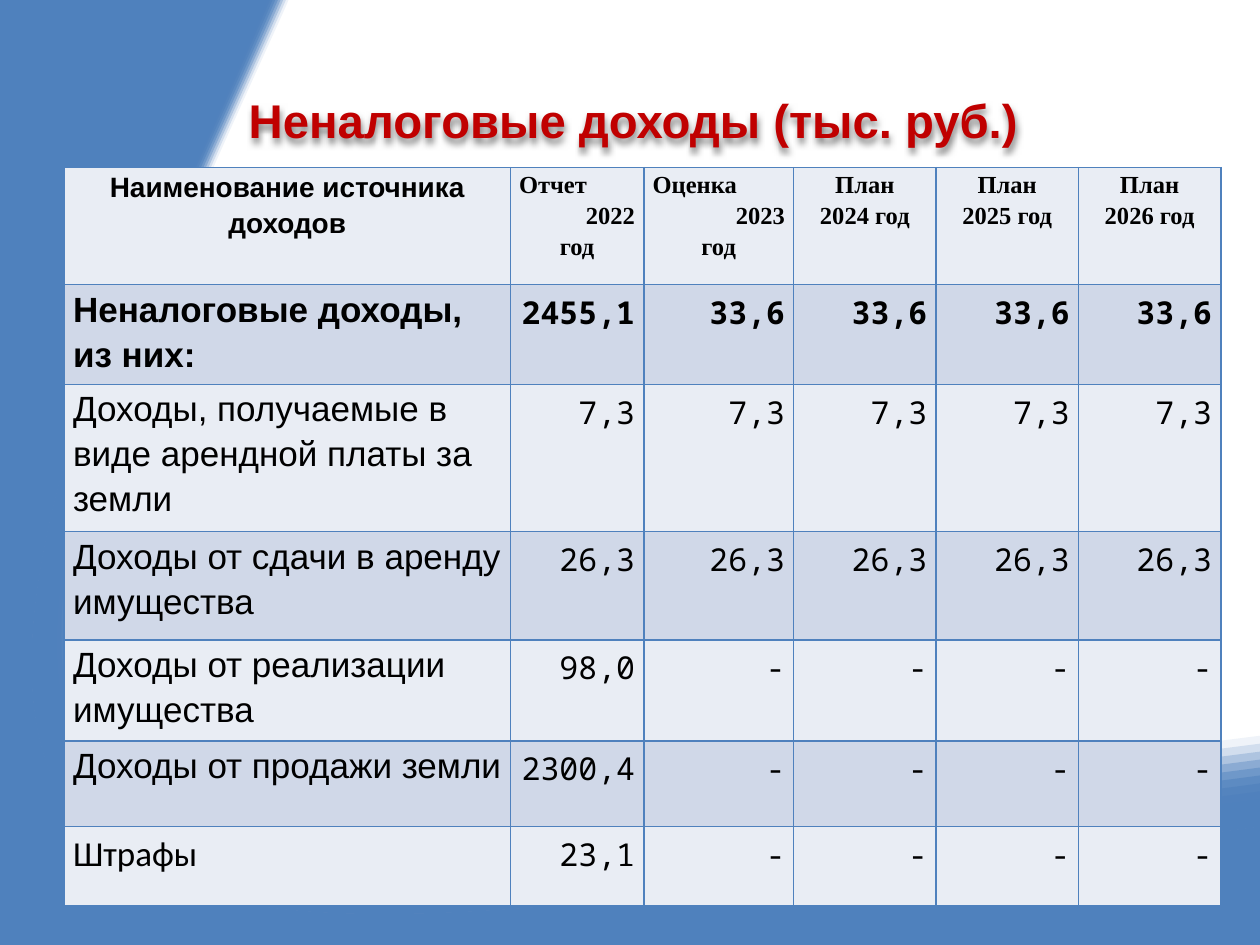
from dataclasses import dataclass

from lxml import etree
from pptx import Presentation
from pptx.dml.color import RGBColor
from pptx.enum.text import MSO_ANCHOR, PP_ALIGN
from pptx.oxml.ns import qn
from pptx.util import Inches, Pt

LEFT, CENTER, RIGHT = PP_ALIGN.LEFT, PP_ALIGN.CENTER, PP_ALIGN.RIGHT
MIDDLE = MSO_ANCHOR.MIDDLE


@dataclass(frozen=True)
class Theme:
    blue: str = "4F81BD"
    red: str = "C00000"
    black: str = "000000"
    bands: tuple = ("E9EDF4", "D0D8E8")
    sans: str = "Arial"
    serif: str = "Times New Roman"
    mono: str = "Noto Sans Mono"
    plain: str = "Calibri"
    title_size: int = 27
    label_size: int = 20
    value_size: int = 18
    heading_size: int = 16
    year_size: int = 14
    line_spacing: float = 1.15
    border: int = 1


THEME = Theme()
SLIDE_WIDTH, SLIDE_HEIGHT = Inches(10), Inches(7.5)

# Each edge runs from the top to the right side: a start point and three cubic curves.
INNER_EDGE = [(1.99, 0), (1.99, 0), (1.8, 0.41), (1.47, 1.15), (-1.21, 7.12),
              (0.8, 7.55), (4.91, 7.14), (8.06, 6.82), (10, 6.56), (10, 6.56)]
FIRST_EDGE = [(2.29, 0), (2.29, 0.01), (2.11, 0.4), (1.8, 1.09), (-0.55, 6.32),
              (1.21, 6.78), (5.18, 6.38), (8.14, 6.09), (9.98, 5.84), (10, 5.84)]
LAST_EDGE = [(2.08, 0), (2.03, 0.11), (1.86, 0.52), (1.58, 1.14), (-1.07, 7.03),
             (0.92, 7.45), (4.98, 7.04), (7.86, 6.75), (9.74, 6.51), (10, 6.47)]
BAND_COUNT = 11
INNER_CURVES = (0, 3, 6)
OUTER_CURVES = (10, 13, 16)

COLUMN_WIDTHS = [3.54, 1.06, 1.19, 1.13, 1.13, 1.13]
ROW_HEIGHTS = [0.93, 0.79, 1.17, 0.86, 0.8, 0.68, 0.63]
YEAR_HEADINGS = [
    [("Отчет", LEFT), ("2022", RIGHT), ("год", CENTER)],
    [("Оценка", LEFT), ("2023", RIGHT), ("год", CENTER)],
    *([("План", CENTER), (f"{year} год", CENTER)] for year in (2024, 2025, 2026)),
]
INCOME_ROWS = [
    (["Неналоговые доходы,", "из них:"], ["2455,1"] + ["33,6"] * 4),
    (["Доходы, получаемые в виде арендной платы за земли"], ["7,3"] * 5),
    (["Доходы от сдачи в аренду имущества"], ["26,3"] * 5),
    (["Доходы от реализации имущества"], ["98,0"] + ["-"] * 4),
    (["Доходы от продажи земли"], ["2300,4"] + ["-"] * 4),
    (["Штрафы"], ["23,1"] + ["-"] * 4),
]


def set_attributes(target, values):
    for name, value in values.items():
        setattr(target, name, value)


def font_format(name, size, bold=False):
    return {"name": name, "size": Pt(size), "bold": bold}


def write_lines(text_frame, lines, font, color=THEME.black, spacing=None):
    """Write (text, alignment) pairs, one paragraph each."""
    for index, (text, alignment) in enumerate(lines):
        paragraph = text_frame.add_paragraph() if index else text_frame.paragraphs[0]
        set_attributes(paragraph, {"alignment": alignment, "line_spacing": spacing})
        run = paragraph.add_run()
        run.text = text
        set_attributes(run.font, font)
        run.font.color.rgb = RGBColor.from_string(color)


def bend_segments(shape, curve_starts):
    """Turn each three segments from a start into one cubic curve; frame the whole slide."""
    outline = shape._element.spPr.find(".//" + qn("a:path"))
    for point in outline.iter(qn("a:pt")):
        point.set("x", str(int(point.get("x")) + shape.left))
        point.set("y", str(int(point.get("y")) + shape.top))
    outline.set("w", str(SLIDE_WIDTH))
    outline.set("h", str(SLIDE_HEIGHT))
    set_attributes(shape, {"left": 0, "top": 0, "width": SLIDE_WIDTH, "height": SLIDE_HEIGHT})
    segments = outline.findall(qn("a:lnTo"))
    for start in curve_starts:
        curve = etree.Element(qn("a:cubicBezTo"))
        segments[start].addprevious(curve)
        for segment in segments[start:start + 3]:
            curve.append(segment[0])
            outline.remove(segment)


def add_area(slide, points, curve_starts, opacity=1.0):
    vertices = [(Inches(x), Inches(y)) for x, y in points]
    builder = slide.shapes.build_freeform(*vertices[0])
    builder.add_line_segments(vertices[1:], close=True)
    shape = builder.convert_to_shape()
    bend_segments(shape, curve_starts)
    shape.shadow.inherit = False
    shape.fill.solid()
    shape.fill.fore_color.rgb = RGBColor.from_string(THEME.blue)
    shape.line.fill.background()
    if opacity < 1:
        color = shape._element.spPr.find(".//" + qn("a:srgbClr"))
        etree.SubElement(color, qn("a:alpha"), val=str(round(opacity * 100) * 1000))


def add_background(slide):
    """Draw the solid corner and the bands that fade out from its curved edge."""
    add_area(slide, INNER_EDGE + [(10, 7.5), (0, 7.5), (0, 0)], INNER_CURVES)
    for band in range(BAND_COUNT):
        share = band / (BAND_COUNT - 1)
        edge = [tuple(a + (b - a) * share for a, b in zip(first, last))
                for first, last in zip(FIRST_EDGE, LAST_EDGE)]
        add_area(slide, INNER_EDGE + edge[::-1], INNER_CURVES + OUTER_CURVES,
                 (band + 1) / BAND_COUNT)


def add_soft_shadow(shape):
    effects = etree.SubElement(shape._element.spPr, qn("a:effectLst"))
    shadow = etree.SubElement(effects, qn("a:outerShdw"), blurRad=str(Pt(4)),
                              dist=str(Pt(3)), dir="5400000", algn="t", rotWithShape="0")
    color = etree.SubElement(shadow, qn("a:srgbClr"), val=THEME.black)
    etree.SubElement(color, qn("a:alpha"), val="50000")


def add_title(slide, text):
    shape = slide.shapes.add_textbox(Inches(0.55), Inches(0.55), Inches(8.95), Inches(1.48))
    set_attributes(shape.text_frame, {
        "word_wrap": True, "vertical_anchor": MIDDLE,
        "margin_top": Inches(0.05), "margin_bottom": Inches(0.73),
    })
    write_lines(shape.text_frame, [(text, CENTER)],
                font_format(THEME.sans, THEME.title_size, True), THEME.red)
    add_soft_shadow(shape)


def add_borders(cell):
    properties = cell._tc.get_or_add_tcPr()
    for index, side in enumerate(("a:lnL", "a:lnR", "a:lnT", "a:lnB")):
        line = etree.Element(qn(side), w=str(Pt(THEME.border)))
        fill = etree.SubElement(line, qn("a:solidFill"))
        etree.SubElement(fill, qn("a:srgbClr"), val=THEME.blue)
        properties.insert(index, line)


def fill_cell(cell, lines, font, fill):
    set_attributes(cell, {
        "margin_left": Inches(0.07), "margin_right": Inches(0.07),
        "margin_top": 0, "margin_bottom": 0,
    })
    cell.fill.solid()
    cell.fill.fore_color.rgb = RGBColor.from_string(fill)
    add_borders(cell)
    write_lines(cell.text_frame, lines, font, spacing=THEME.line_spacing)


def table_rows():
    """Yield each row as a list of (lines, font) cells."""
    heading = [("Наименование источника доходов", CENTER)]
    year_font = font_format(THEME.serif, THEME.year_size, True)
    yield [(heading, font_format(THEME.sans, THEME.heading_size, True)),
           *((lines, year_font) for lines in YEAR_HEADINGS)]
    for index, (labels, values) in enumerate(INCOME_ROWS):
        total = index == 0
        label_face = THEME.plain if index == len(INCOME_ROWS) - 1 else THEME.sans
        value_font = font_format(THEME.mono, THEME.value_size, total)
        yield [([(label, LEFT) for label in labels],
                font_format(label_face, THEME.label_size, total)),
               *(([(value, RIGHT)], value_font) for value in values)]


def add_income_table(slide):
    table = slide.shapes.add_table(
        len(ROW_HEIGHTS), len(COLUMN_WIDTHS), Inches(0.51), Inches(1.33),
        Inches(sum(COLUMN_WIDTHS)), Inches(sum(ROW_HEIGHTS))).table
    for column, width in zip(table.columns, COLUMN_WIDTHS):
        column.width = Inches(width)
    for row, height in zip(table.rows, ROW_HEIGHTS):
        row.height = Inches(height)
    for row_index, cells in enumerate(table_rows()):
        for column_index, (lines, font) in enumerate(cells):
            fill_cell(table.cell(row_index, column_index), lines, font,
                      THEME.bands[row_index % 2])


def main():
    presentation = Presentation()
    set_attributes(presentation, {"slide_width": SLIDE_WIDTH, "slide_height": SLIDE_HEIGHT})
    slide = presentation.slides.add_slide(presentation.slide_layouts[6])
    add_background(slide)
    add_title(slide, "Неналоговые доходы (тыс. руб.)")
    add_income_table(slide)
    presentation.save("out.pptx")


if __name__ == "__main__":
    main()
